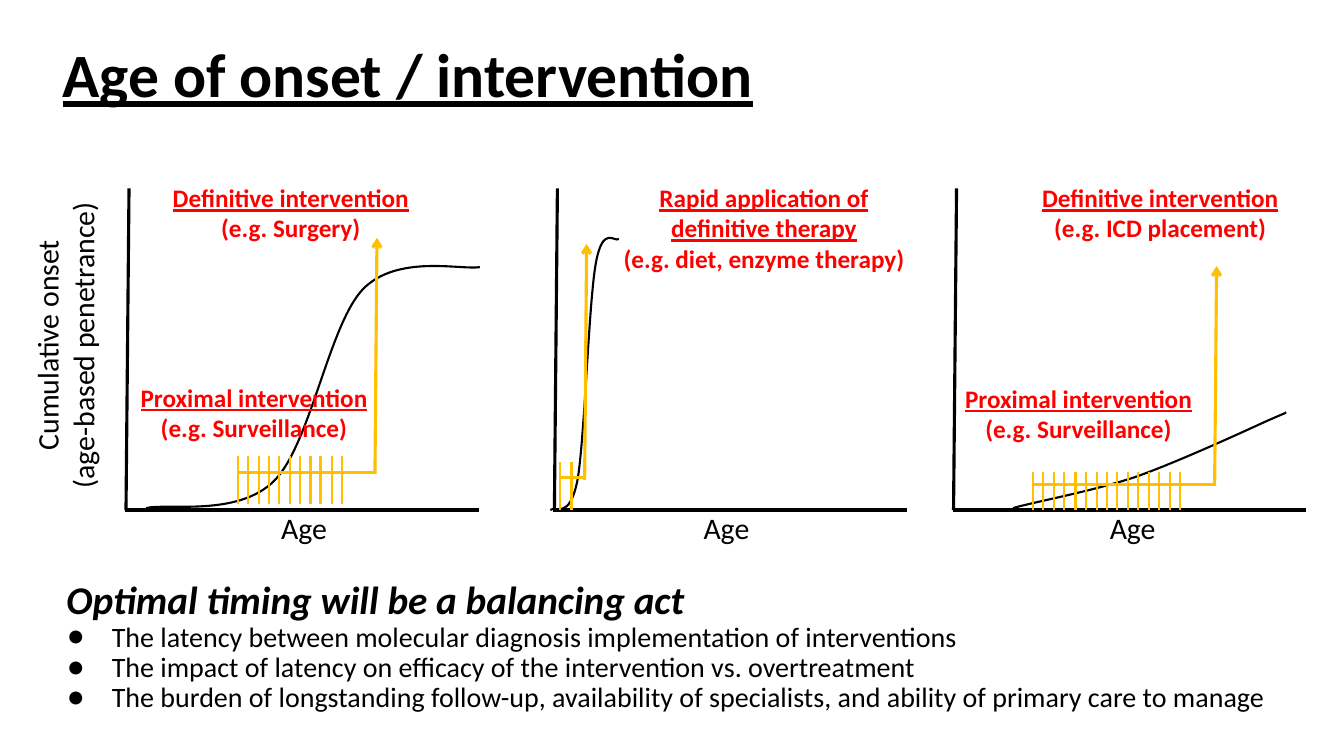
from lxml import etree
from pptx import Presentation
from pptx import util as u
from pptx.dml.color import RGBColor
from pptx.enum import shapes, text
from pptx.oxml import ns

PX = 9144  # 100 px to the inch
FONT = "Calibri"
COLORS = {name: RGBColor.from_string(value) for name, value in
          {"black": "000000", "red": "FF0000", "gold": "FFC000"}.items()}

presentation = Presentation()
presentation.slide_width, presentation.slide_height = 4000 * PX // 3, 750 * PX
slide = presentation.slides.add_slide(presentation.slide_layouts[5])


def add_line(start, end, color, width, arrow=False):
    line = slide.shapes.add_connector(
        shapes.MSO_CONNECTOR.STRAIGHT, *(value * PX for value in start + end))
    line.line.color.rgb = COLORS[color]
    line.line.width = u.Pt(width)
    if arrow:
        etree.SubElement(line.line._get_or_add_ln(), ns.qn("a:tailEnd"), type="arrow")
    etree.SubElement(line._element.spPr, ns.qn("a:effectLst"))


def write(shape, lines, inset, align=text.PP_ALIGN.LEFT, spacing=1.0):
    """Fill a shape with lines of (text, size, color, font styles)."""
    frame = shape.text_frame
    frame.word_wrap = True
    frame.auto_size = text.MSO_AUTO_SIZE.NONE
    frame.margin_left = frame.margin_right = inset * PX
    frame.margin_top = frame.margin_bottom = inset * PX
    for index, (words, size, color, styles) in enumerate(lines):
        paragraph = frame.add_paragraph() if index else frame.paragraphs[0]
        paragraph.alignment = align
        paragraph.line_spacing = spacing
        run = paragraph.add_run()
        run.text = words
        run.font.name = FONT
        run.font.size = u.Pt(size)
        run.font.color.rgb = COLORS[color]
        run.font.bold = "b" in styles
        run.font.italic = "i" in styles
        run.font.underline = "u" in styles


# Title
title = slide.shapes.title
title.left, title.top, title.width, title.height = 49 * PX, 13 * PX, 1229 * PX, 110 * PX
write(title, [("Age of onset / intervention", 44, "black", "bu")], 13, spacing=0.9)
title.text_frame.vertical_anchor = text.MSO_ANCHOR.BOTTOM

# Shared vertical axis label
axis_label = slide.shapes.add_textbox(-74 * PX, 275 * PX, 314 * PX, 135 * PX)
axis_label.rotation = 270
write(axis_label, [("Cumulative onset", 21.3, "black", ""),
                   ("(age-based penetrance)", 21.3, "black", "")],
      13, text.PP_ALIGN.CENTER)

# Panels: each curve is a start point followed by cubic Bézier segments
AXIS_TOP, AXIS_BOTTOM, AXIS_LENGTH = 187, 506, 351
panels = [
    {"axis": 125, "age": 266,
     "curve": [(145, 504), (166, 499), (236, 513), (272, 477), (308, 441), (326, 323),
               (360, 287), (394, 252), (457, 268), (476, 265)],
     "arrow": ((372, 470), (374, 236)), "bar": (236, 371, 469),
     "ticks": (236, 339, 11, 452, 500),
     "labels": [((151, 168, 275, 88), "Definitive intervention", "(e.g. Surgery)"),
                ((95, 366, 314, 88), "Proximal intervention", "(e.g. Surveillance)")]},
    {"axis": 550, "age": 685,
     "curve": [(546, 506), (551, 501), (565, 517), (573, 476), (580, 436), (584, 302),
               (591, 262), (598, 222), (610, 241), (614, 237)],
     "arrow": ((580, 476), (582, 242)), "bar": (556, 578, 474),
     "ticks": (556, 567, 2, 458, 506),
     "labels": [((605, 168, 306, 118), "Rapid application of definitive therapy",
                 "(e.g. diet, enzyme therapy)")]},
    {"axis": 946, "age": 1088,
     "curve": [(1005, 504), (1026, 498), (1085, 487), (1127, 473), (1169, 458), (1232, 429),
               (1256, 418), (1281, 407), (1273, 411), (1276, 409)],
     "arrow": ((1205, 482), (1207, 264)), "bar": (1025, 1204, 481),
     "ticks": (1025, 1171, 15, 468, 506),
     "labels": [((985, 168, 332, 88), "Definitive intervention", "(e.g. ICD placement)"),
                ((932, 367, 276, 88), "Proximal intervention", "(e.g. Surveillance)")]},
]

for panel in panels:
    # Axes
    axis = panel["axis"]
    add_line((axis + 3, AXIS_TOP), (axis, AXIS_BOTTOM), "black", 2.25)
    add_line((axis - 1, AXIS_BOTTOM), (axis - 1 + AXIS_LENGTH, AXIS_BOTTOM), "black", 2.25)
    age_label = slide.shapes.add_textbox(panel["age"] * PX, 493 * PX, 99 * PX, 49 * PX)
    write(age_label, [("Age", 21.3, "black", "")], 13)

    # Onset curve: lines between the anchors become cubic segments
    curve = [(x * PX, y * PX) for x, y in panel["curve"]]
    builder = slide.shapes.build_freeform(*curve[0])
    builder.add_line_segments(curve[3::3], close=False)
    onset = builder.convert_to_shape()
    segments = list(onset._element.iter(ns.qn("a:lnTo")))
    for index, segment in enumerate(segments):
        cubic = etree.Element(ns.qn("a:cubicBezTo"))
        for x, y in curve[3 * index + 1:3 * index + 4]:
            etree.SubElement(cubic, ns.qn("a:pt"), x=str(x - onset.left), y=str(y - onset.top))
        segment.getparent().replace(segment, cubic)
    onset.shadow.inherit = False
    onset.fill.background()
    onset.line.color.rgb = COLORS["black"]
    onset.line.width = u.Pt(1.5)

    # Interventions: labels, arrow, bar and ticks
    for box, name, example in panel["labels"]:
        label = slide.shapes.add_textbox(*(value * PX for value in box))
        write(label, [(name, 18, "red", "bu"), (example, 18, "red", "b")],
              13, text.PP_ALIGN.CENTER)
    add_line(*panel["arrow"], "gold", 2.25, arrow=True)
    left, right, height = panel["bar"]
    add_line((left, height), (right, height), "gold", 2.25)
    first_tick, last_tick, count, top, bottom = panel["ticks"]
    for index in range(count):
        x = first_tick + round(index * (last_tick - first_tick) / (count - 1))
        add_line((x, top), (x, bottom), "gold", 1.5)

# Conclusion
conclusion = slide.shapes.add_textbox(34 * PX, 566 * PX, 1248 * PX, 179 * PX)
bullets = [
    "The latency between molecular diagnosis implementation of interventions",
    "The impact of latency on efficacy of the intervention vs. overtreatment",
    "The burden of longstanding follow-up, availability of specialists, "
    "and ability of primary care to manage",
]
write(conclusion, [("Optimal timing will be a balancing act", 28, "black", "bi")]
      + [(bullet, 20, "black", "") for bullet in bullets], 10, spacing=0.9)
heading, *items = conclusion.text_frame.paragraphs
heading._p.get_or_add_pPr().set("marL", str(22 * PX))
for item in items:
    properties = item._p.get_or_add_pPr()
    properties.set("marL", str(67 * PX))
    properties.set("indent", str(-44 * PX))
    etree.SubElement(properties, ns.qn("a:buFont"), typeface=FONT)
    etree.SubElement(properties, ns.qn("a:buChar"), char="●")

presentation.save("out.pptx")
